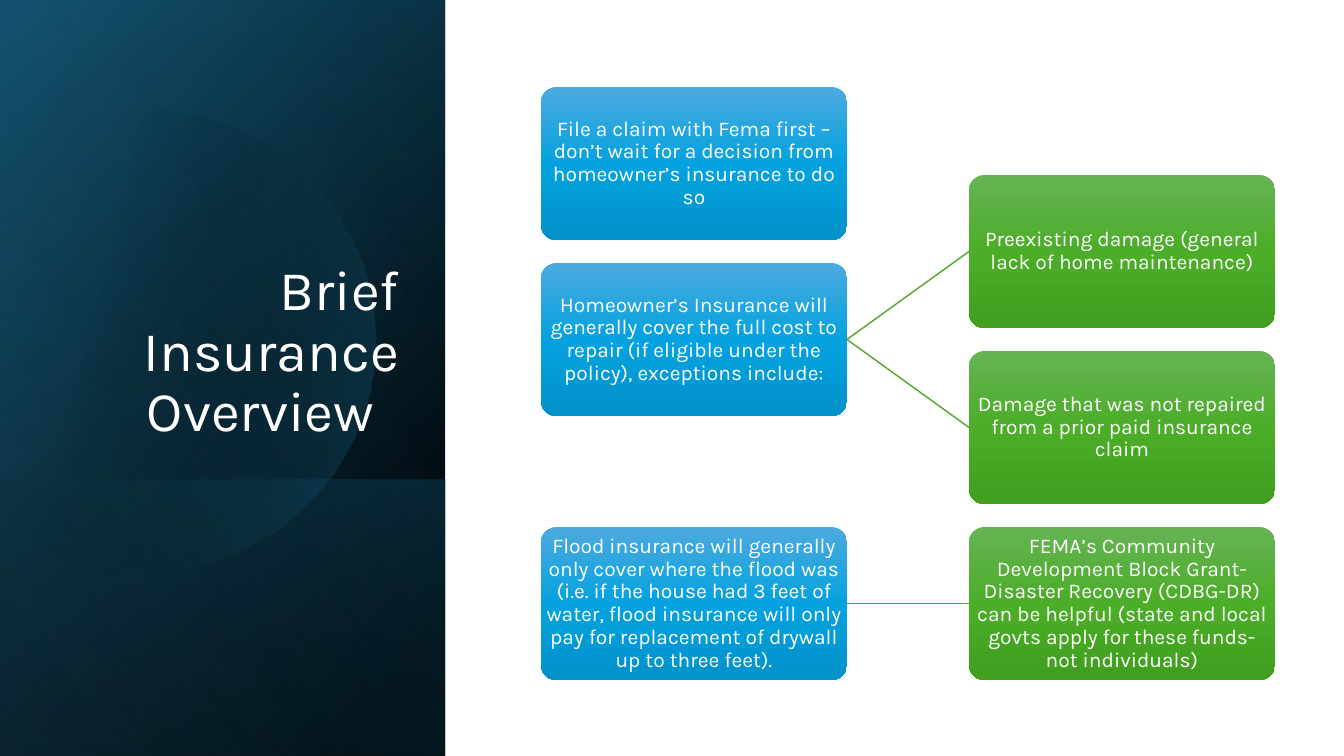
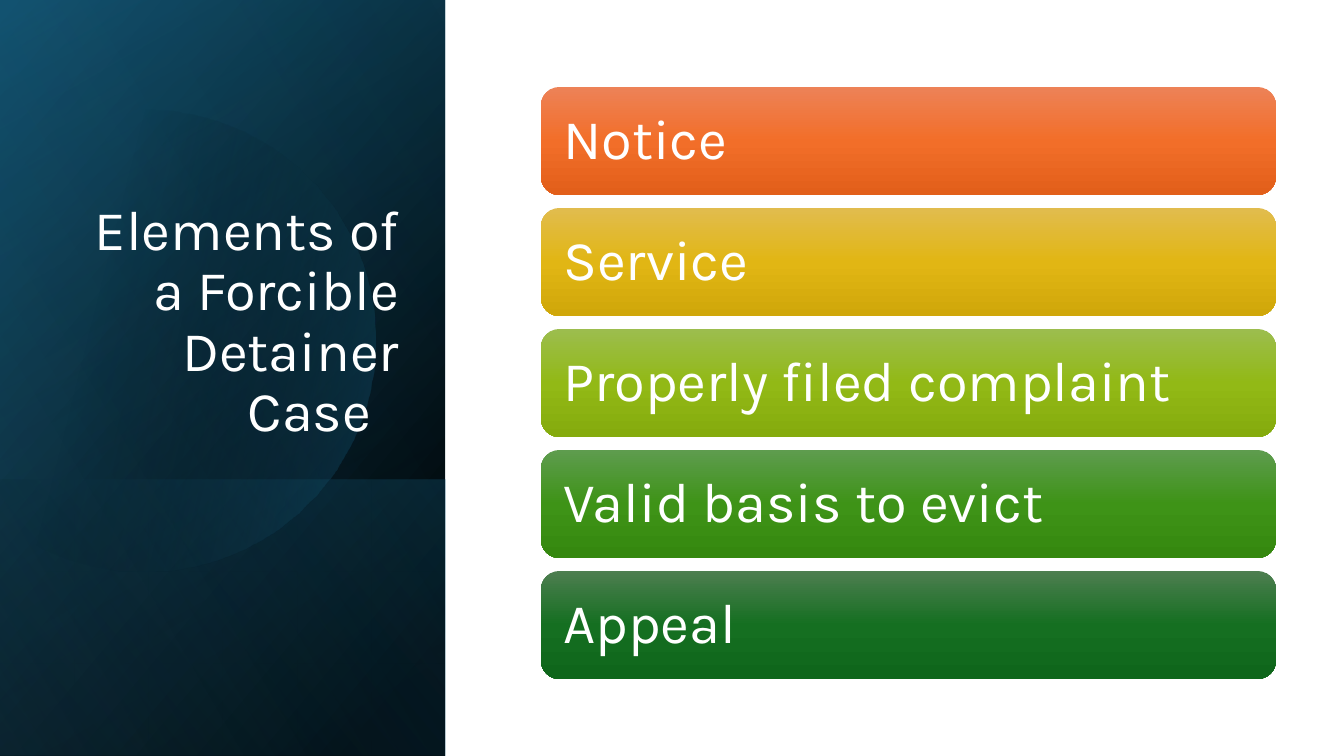
from math import cos, radians, sin

from lxml import etree
from pptx import Presentation
from pptx.dml.color import RGBColor
from pptx.enum.shapes import MSO_CONNECTOR as CONNECTOR, MSO_SHAPE as SHAPE
from pptx.enum.text import MSO_ANCHOR as ANCHOR, PP_ALIGN as ALIGN
from pptx.oxml.ns import qn
from pptx.util import Emu, Pt

# Shared look
EMU_PER_PX = 914400 / 100.8
SLIDE_W, SLIDE_H = 1344, 756
FONT = "Karla"
WHITE = "FFFFFF"
LINK_GREEN = "4EA72E"
BLUE = ("4CAADF", "05A2DF", "0092CB")
GREEN = ("66B354", "4BAD28", "409F1E")

# Side panel: gradient stops are (position %, colour, opacity %)
PANEL_W = 445
LOWER_TOP = 480
BASE = ([(8, "000000", 100), (100, "104862", 100)], 50)
TINT = ([(0, "000000", 0), (99, "156082", 46)], 30)
LOWER = ([(2, "156082", 29), (100, "000000", 30)], 130)
DISC = ([(29, "000000", 0), (100, "156082", 43)], 14)
GLOW = ([(0, "000000", 0), (99, "46B1E1", 11)], 120)
DISC_X, DISC_Y, DISC_R, DISC_HALF_ANGLE = 144, 341, 231, 128

# Slide 1: (row, text, [(row, text) of each linked box])
INSURANCE_TITLE = "Brief Insurance Overview\t"
INSURANCE = [
    (0, "File a claim with Fema first – don’t wait for a decision from "
        "homeowner’s insurance to do so", []),
    (1, "Homeowner’s Insurance will generally cover the full cost to repair "
        "(if eligible under the policy), exceptions include:", [
            (0.5, "Preexisting damage (general lack of home maintenance)"),
            (1.5, "Damage that was not repaired from a prior paid insurance claim")]),
    (2.5, "Flood insurance will generally only cover where the flood was "
          "(i.e. if the house had 3 feet of water, flood insurance will only "
          "pay for replacement of drywall up to three feet).", [
              (2.5, "FEMA’s Community Development Block Grant-Disaster Recovery "
                    "(CDBG-DR) can be helpful (state and local govts apply for "
                    "these funds- not individuals)")]),
]

# Slide 2: (text, gradient from top to bottom)
ELEMENTS_TITLE = "Elements of a Forcible Detainer Case\t"
ELEMENTS = [
    ("Notice", ("ED8257", "F26E29", "E25F1A")),
    ("Service", ("E1BC4E", "E1B614", "D0A70A")),
    ("Properly filed complaint", ("9CBD4E", "92B916", "85AB0D")),
    ("Valid basis to evict", ("5E9C4E", "3E9317", "35880F")),
    ("Appeal", ("4D7E50", "156F21", "0F661B")),
]

# Diagram grids
DIAGRAM_TOP = 87
BOX_LEFT, DETAIL_LEFT, BOX_W, BOX_H, BOX_PITCH = 541, 969, 306, 153, 176
BAR_LEFT, BAR_W, BAR_H, BAR_PITCH = 541, 735, 108, 121


def px(value):
    return Emu(round(value * EMU_PER_PX))


def rgb(hex_string):
    return RGBColor.from_string(hex_string)


def paint(shape, stops, angle):
    """Plain shape without line or shadow, filled with a linear gradient."""
    shape.shadow.inherit = False
    shape.line.fill.background()
    shape.fill.background()
    no_fill = shape.element.spPr.find(qn("a:noFill"))
    gradient = etree.Element(qn("a:gradFill"), rotWithShape="1")
    stop_list = etree.SubElement(gradient, qn("a:gsLst"))
    for position, color, opacity in stops:
        stop = etree.SubElement(stop_list, qn("a:gs"), pos=str(position * 1000))
        clr = etree.SubElement(stop, qn("a:srgbClr"), val=color)
        if opacity < 100:
            etree.SubElement(clr, qn("a:alpha"), val=str(opacity * 1000))
    etree.SubElement(gradient, qn("a:lin"), ang=str(angle * 60000), scaled="0")
    no_fill.getparent().replace(no_fill, gradient)


def write(shape, text, size, align, anchor, inset):
    frame = shape.text_frame
    frame.word_wrap = True
    frame.vertical_anchor = anchor
    frame.margin_left = frame.margin_right = px(inset)
    frame.margin_top = frame.margin_bottom = px(min(inset, 5))
    paragraph = frame.paragraphs[0]
    paragraph.alignment = align
    paragraph.line_spacing = 0.9
    run = paragraph.add_run()
    run.text = text
    run.font.name = FONT
    run.font.size = Pt(size)
    run.font.color.rgb = rgb(WHITE)


def add_panel_layer(slide, top, height, look):
    """Rectangle turned a quarter and mirrored, so its gradient turns too."""
    left = (PANEL_W - height) / 2
    turned_top = top + (height - PANEL_W) / 2
    layer = slide.shapes.add_shape(
        SHAPE.RECTANGLE, px(left), px(turned_top), px(height), px(PANEL_W))
    layer.rotation = 90
    layer.element.spPr.find(qn("a:xfrm")).set("flipH", "1")
    paint(layer, *look)


def add_disc(slide):
    """Disc cut off by the left edge of the slide."""
    rim = [(DISC_X + DISC_R * cos(radians(a)), DISC_Y + DISC_R * sin(radians(a)))
           for a in range(-DISC_HALF_ANGLE, DISC_HALF_ANGLE + 1, 2)]
    builder = slide.shapes.build_freeform(*rim[0], scale=EMU_PER_PX)
    builder.add_line_segments(rim[1:], close=True)
    paint(builder.convert_to_shape(), *DISC)


def new_slide(deck, title):
    slide = deck.slides.add_slide(deck.slide_layouts[6])
    add_panel_layer(slide, 0, SLIDE_H, BASE)
    add_panel_layer(slide, 0, SLIDE_H, TINT)
    add_panel_layer(slide, LOWER_TOP, SLIDE_H - LOWER_TOP, LOWER)
    add_disc(slide)
    add_panel_layer(slide, 0, SLIDE_H, GLOW)
    heading = slide.shapes.add_textbox(px(65), px(185), px(344), px(264))
    write(heading, title, 40, ALIGN.RIGHT, ANCHOR.BOTTOM, 10)
    return slide


def add_card(slide, left, top, width, height, rounding, colors):
    card = slide.shapes.add_shape(
        SHAPE.ROUNDED_RECTANGLE, px(left), px(top), px(width), px(height))
    card.adjustments[0] = rounding
    paint(card, [(at, color, 100) for at, color in zip((0, 50, 100), colors)], 90)
    return card


def add_box(slide, left, row, text, colors):
    top = DIAGRAM_TOP + row * BOX_PITCH
    box = add_card(slide, left, top, BOX_W, BOX_H, 0.1, colors)
    write(box, text, 15, ALIGN.CENTER, ANCHOR.MIDDLE, 1)
    return box


def add_link(slide, topic, detail):
    link = slide.shapes.add_connector(CONNECTOR.STRAIGHT, 0, 0, 0, 0)
    link.begin_connect(topic, 3)
    link.end_connect(detail, 1)
    link.line.color.rgb = rgb(LINK_GREEN)
    link.line.width = Pt(1)
    etree.SubElement(link.element.spPr, qn("a:effectLst"))


def build_insurance(deck):
    slide = new_slide(deck, INSURANCE_TITLE)
    for row, text, details in INSURANCE:
        topic = add_box(slide, BOX_LEFT, row, text, BLUE)
        for detail_row, detail_text in details:
            detail = add_box(slide, DETAIL_LEFT, detail_row, detail_text, GREEN)
            add_link(slide, topic, detail)


def build_elements(deck):
    slide = new_slide(deck, ELEMENTS_TITLE)
    for index, (text, colors) in enumerate(ELEMENTS):
        top = DIAGRAM_TOP + index * BAR_PITCH
        bar = add_card(slide, BAR_LEFT, top, BAR_W, BAR_H, 0.17, colors)
        write(bar, text, 40, ALIGN.LEFT, ANCHOR.MIDDLE, 17)


def main():
    deck = Presentation()
    deck.slide_width, deck.slide_height = px(SLIDE_W), px(SLIDE_H)
    build_insurance(deck)
    build_elements(deck)
    deck.save("out.pptx")


if __name__ == "__main__":
    main()
